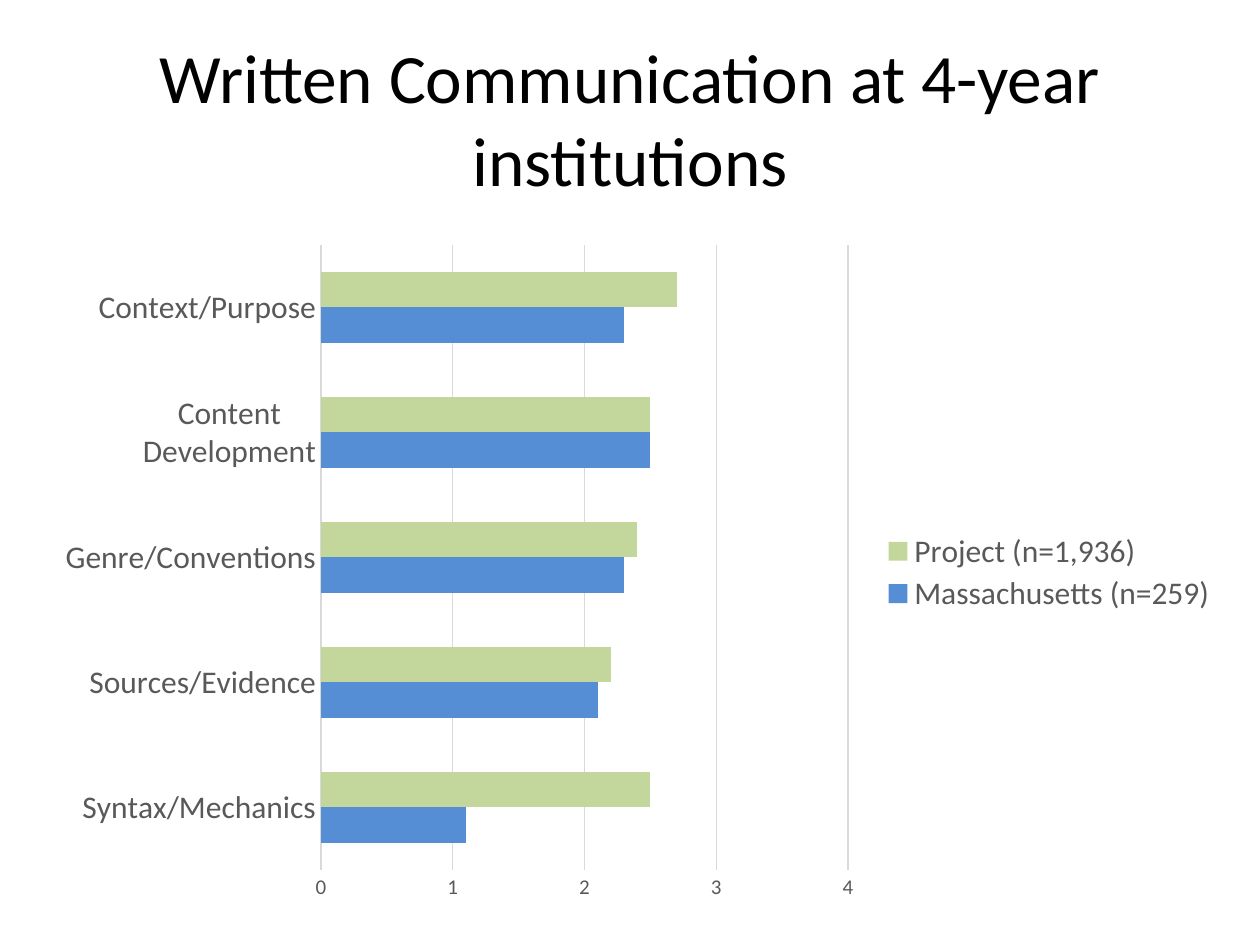
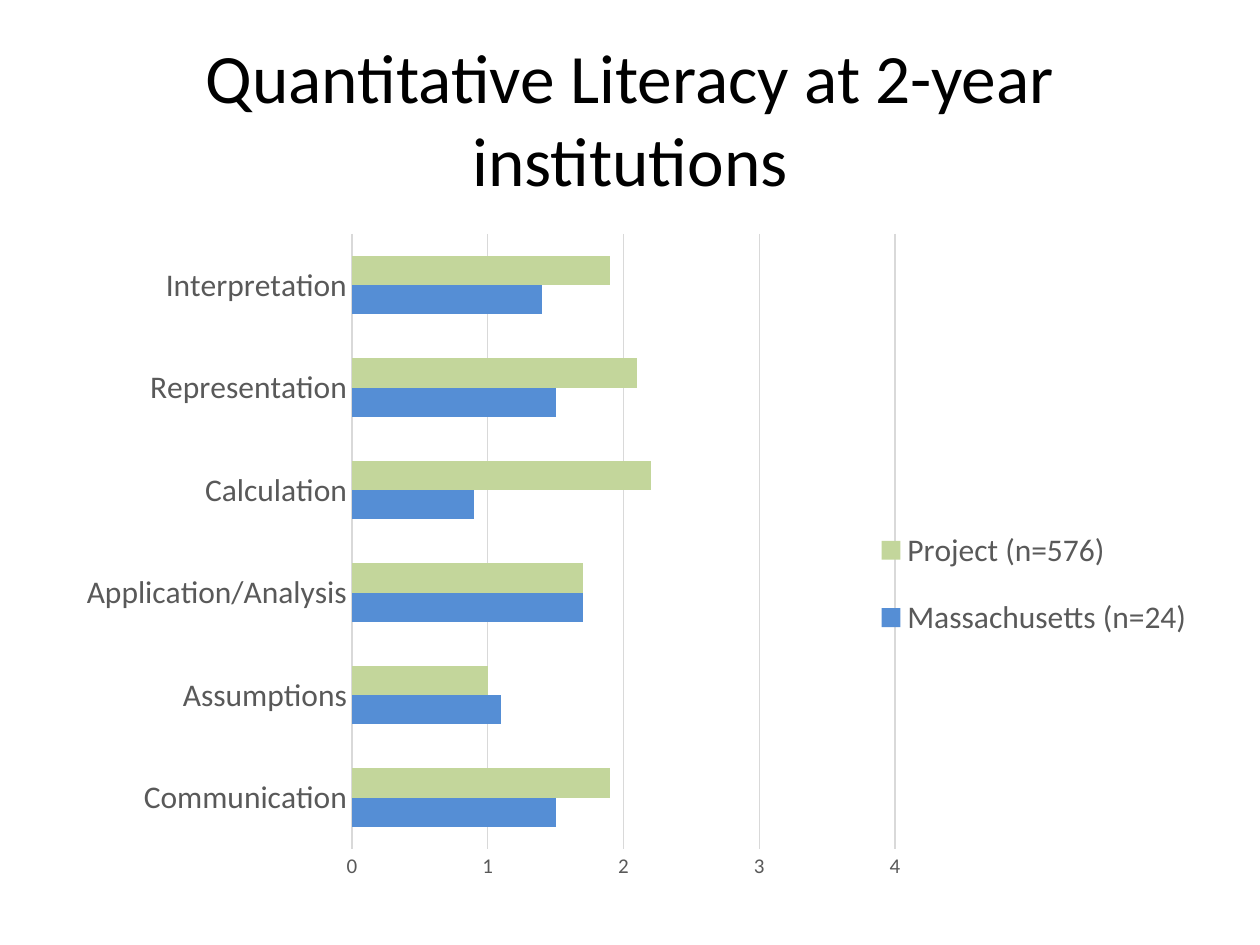
from dataclasses import dataclass

from lxml.etree import SubElement
from pptx import Presentation
from pptx.chart.data import CategoryChartData
from pptx.dml.color import RGBColor
from pptx.enum.chart import XL_CHART_TYPE as ChartType
from pptx.enum.chart import XL_LEGEND_POSITION as LegendPosition
from pptx.enum.chart import XL_TICK_MARK as TickMark
from pptx.enum.text import MSO_ANCHOR as Anchor
from pptx.enum.text import PP_ALIGN as Align
from pptx.oxml.ns import qn
from pptx.util import Pt

EMU_PER_PX = 914400 / 126


def px(length):
    return round(length * EMU_PER_PX)


@dataclass(frozen=True)
class Theme:
    font: str = "Calibri"
    title_color: str = "000000"
    label_color: str = "595959"
    grid_color: str = "D9D9D9"
    series_colors: tuple = ("558ED5", "C3D69B")
    title_size: float = 39.6
    label_size: float = 18
    scale_size: float = 12
    grid_width: float = 0.75


class Deck:
    def __init__(self, theme, width, height):
        self.theme = theme
        self.presentation = Presentation()
        self.presentation.slide_width = px(width)
        self.presentation.slide_height = px(height)
        self.slide = None

    def add_slide(self):
        blank = self.presentation.slide_layouts[6]
        self.slide = self.presentation.slides.add_slide(blank)

    def style_font(self, font, size, color):
        font.name = self.theme.font
        font.size = Pt(size)
        font.color.rgb = RGBColor.from_string(color)

    def style_line(self, line):
        line.color.rgb = RGBColor.from_string(self.theme.grid_color)
        line.width = Pt(self.theme.grid_width)

    def add_title(self, text):
        shape = self.slide.shapes.add_textbox(*map(px, (63, 38, 1134, 158)))
        frame = shape.text_frame
        frame.word_wrap = True
        frame.vertical_anchor = Anchor.MIDDLE
        frame.text = text
        paragraph = frame.paragraphs[0]
        paragraph.alignment = Align.CENTER
        for run in paragraph.runs:
            self.style_font(run.font, self.theme.title_size, self.theme.title_color)

    def add_bar_chart(self, box, plot_box, legend_box, categories, series):
        data = CategoryChartData()
        data.categories = categories
        for name, values in series:
            data.add_series(name, values)
        chart = self.slide.shapes.add_chart(
            ChartType.BAR_CLUSTERED, *map(px, box), data
        ).chart
        chart.has_title = False
        self.style_font(chart.font, 10, self.theme.title_color)
        self.style_bars(chart.plots[0])
        self.style_axes(chart)
        self.add_legend(chart)
        plot_area = chart.element.find(f".//{qn('c:plotArea')}")
        legend = chart.element.find(f".//{qn('c:legend')}")
        self.set_layout(plot_area, 0, box, plot_box, inner=True)
        self.set_layout(legend, 1, box, legend_box)

    def style_bars(self, plot):
        plot.gap_width = 150
        plot.overlap = 0
        plot.vary_by_categories = False
        for series, color in zip(plot.series, self.theme.series_colors):
            series.format.fill.solid()
            series.format.fill.fore_color.rgb = RGBColor.from_string(color)

    def style_axes(self, chart):
        theme = self.theme
        category_axis, value_axis = chart.category_axis, chart.value_axis
        for axis, size in (
            (category_axis, theme.label_size),
            (value_axis, theme.scale_size),
        ):
            axis.major_tick_mark = axis.minor_tick_mark = TickMark.NONE
            self.style_font(axis.tick_labels.font, size, theme.label_color)
        self.style_line(category_axis.format.line)
        value_axis.minimum_scale = 0
        value_axis.maximum_scale = 4
        value_axis.major_unit = 1
        value_axis.format.line.fill.background()
        value_axis.has_major_gridlines = True
        self.style_line(value_axis.major_gridlines.format.line)

    def add_legend(self, chart):
        chart.has_legend = True
        chart.legend.position = LegendPosition.RIGHT
        chart.legend.include_in_layout = False
        self.style_font(
            chart.legend.font, self.theme.label_size, self.theme.label_color
        )

    def set_layout(self, parent, index, chart_box, part_box, inner=False):
        for old_layout in parent.findall(qn("c:layout")):
            parent.remove(old_layout)
        layout = SubElement(parent, qn("c:layout"))
        parent.insert(index, layout)
        manual = SubElement(layout, qn("c:manualLayout"))
        left, top, width, height = chart_box
        part_left, part_top, part_width, part_height = part_box
        settings = [("layoutTarget", "inner")] if inner else []
        settings += [
            ("xMode", "edge"),
            ("yMode", "edge"),
            ("x", (part_left - left) / width),
            ("y", (part_top - top) / height),
            ("w", part_width / width),
            ("h", part_height / height),
        ]
        for tag, value in settings:
            SubElement(manual, qn(f"c:{tag}")).set("val", str(value))


SLIDES = [
    {
        "title": "Written Communication at 4-year institutions",
        "box": (42, 231, 1187, 683),
        "plot_box": (321, 245, 527, 625),
        "legend_box": (880, 528, 338, 89),
        "categories": [
            "Syntax/Mechanics",
            "Sources/Evidence",
            "Genre/Conventions",
            "Content Development",
            "Context/Purpose",
        ],
        "series": [
            ("Massachusetts (n=259)", [1.1, 2.1, 2.3, 2.5, 2.3]),
            ("Project (n=1,936)", [2.5, 2.2, 2.4, 2.5, 2.7]),
        ],
    },
    {
        "title": "Quantitative Literacy at 2-year institutions",
        "box": (63, 220, 1197, 672),
        "plot_box": (352, 234, 543, 615),
        "legend_box": (875, 502, 318, 164),
        "categories": [
            "Communication",
            "Assumptions",
            "Application/Analysis",
            "Calculation",
            "Representation",
            "Interpretation",
        ],
        "series": [
            ("Massachusetts (n=24)", [1.5, 1.1, 1.7, 0.9, 1.5, 1.4]),
            ("Project (n=576)", [1.9, 1, 1.7, 2.2, 2.1, 1.9]),
        ],
    },
]


def main():
    deck = Deck(Theme(), 1260, 945)
    for content in SLIDES:
        deck.add_slide()
        deck.add_title(content["title"])
        deck.add_bar_chart(
            content["box"],
            content["plot_box"],
            content["legend_box"],
            content["categories"],
            content["series"],
        )
    deck.presentation.save("out.pptx")


if __name__ == "__main__":
    main()
